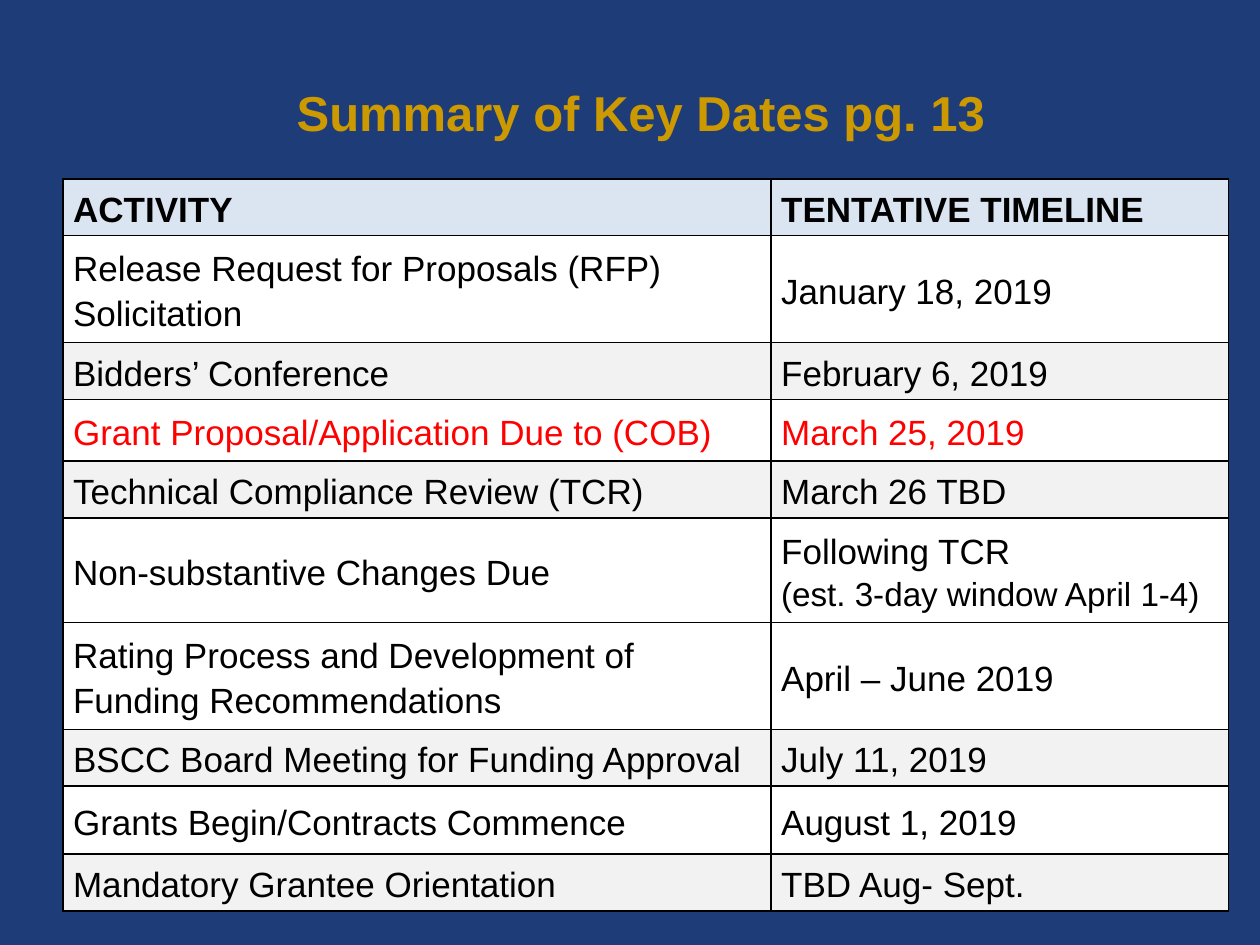
"""Build the key dates slide: a title above a two-column timeline table."""
import pptx
import pptx.dml.color
import pptx.enum.text
import pptx.oxml
import pptx.oxml.ns
import pptx.util

THEME = {
    "font": "Arial", "title_size": 28, "body_size": 20, "note_size": 19,
    "background": "1E3C78", "title": "CC9900", "text": "000000", "alert": "FF0000",
    "header": "DBE5F1", "plain": "FFFFFF", "band": "F2F2F2", "border": "000000",
}
ALIGN = pptx.enum.text.PP_ALIGN
ANCHOR = pptx.enum.text.MSO_ANCHOR

MILESTONES = [
    ("ACTIVITY", "TENTATIVE TIMELINE", 1.8, "header"),
    ("Release Request for Proposals (RFP) Solicitation", "January 18, 2019", 3.4, "plain"),
    ("Bidders’ Conference", "February 6, 2019", 1.8, "band"),
    ("Grant Proposal/Application Due to (COB)", "March 25, 2019", 1.96, "plain"),
    ("Technical Compliance Review (TCR)", "March 26 TBD", 1.8, "band"),
    ("Non-substantive Changes Due",
     "Following TCR\n(est. 3-day window April 1-4)", 3.32, "plain"),
    ("Rating Process and Development of Funding Recommendations",
     "April – June 2019", 3.4, "plain"),
    ("BSCC Board Meeting for Funding Approval", "July 11, 2019", 1.8, "band"),
    ("Grants Begin/Contracts Commence", "August 1, 2019", 2.16, "plain"),
    ("Mandatory Grantee Orientation", "TBD Aug- Sept.", 1.8, "band"),
]
COLUMN_SPANS = (22.48, 14.52)
DEADLINE_ROW = 3
FIRST_JUSTIFIED_DATE = 5


def style(paragraph, size, color, bold, align):
    paragraph.alignment = align
    for run in paragraph.runs:
        run.font.name = THEME["font"]
        run.font.size = pptx.util.Pt(THEME[size])
        run.font.bold = bold
        run.font.color.rgb = pptx.dml.color.RGBColor.from_string(THEME[color])


def add_borders(cell):
    properties = cell._tc.get_or_add_tcPr()
    for side in ("lnL", "lnR", "lnT", "lnB"):
        properties.append(pptx.oxml.parse_xml(
            f'<a:{side} {pptx.oxml.ns.nsdecls("a")} w="{pptx.util.Pt(1)}"><a:solidFill>'
            f'<a:srgbClr val="{THEME["border"]}"/></a:solidFill></a:{side}>'))


deck = pptx.Presentation()
deck.slide_width = pptx.util.Inches(10)
deck.slide_height = pptx.util.Inches(7.5)
column = deck.slide_width / 40
row = deck.slide_height / 30

slide = deck.slides.add_slide(deck.slide_layouts[5])
slide.background.fill.solid()
slide.background.fill.fore_color.rgb = pptx.dml.color.RGBColor.from_string(THEME["background"])

heading = slide.shapes.title
heading.left, heading.top = int(3.68 * column), int(2 * row)
heading.width, heading.height = int(33.32 * column), int(2.68 * row)
heading.text_frame.text = "Summary of Key Dates pg. 13"
heading.text_frame.auto_size = pptx.enum.text.MSO_AUTO_SIZE.NONE
heading.text_frame.vertical_anchor = ANCHOR.BOTTOM
style(heading.text_frame.paragraphs[0], "title_size", "title", True, ALIGN.CENTER)

total_rows = sum(milestone[2] for milestone in MILESTONES)
schedule = slide.shapes.add_table(
    len(MILESTONES), len(COLUMN_SPANS), int(2 * column), int(5.68 * row),
    int(sum(COLUMN_SPANS) * column), int(total_rows * row)).table
for table_column, span in zip(schedule.columns, COLUMN_SPANS):
    table_column.width = int(span * column)

for r, (activity, timeline, span, fill) in enumerate(MILESTONES):
    schedule.rows[r].height = int(span * row)
    for c, wording in enumerate((activity, timeline)):
        cell = schedule.cell(r, c)
        cell.text_frame.text = wording
        cell.vertical_anchor = ANCHOR.MIDDLE
        cell.margin_left = cell.margin_right = pptx.util.Inches(0.08)
        cell.margin_top = cell.margin_bottom = pptx.util.Inches(0.03)
        add_borders(cell)
        cell.fill.solid()
        cell.fill.fore_color.rgb = pptx.dml.color.RGBColor.from_string(THEME[fill])
        justified = r == 0 or (c == 1 and r >= FIRST_JUSTIFIED_DATE)
        for line, paragraph in enumerate(cell.text_frame.paragraphs):
            paragraph.line_spacing = 1.15
            style(paragraph, "note_size" if line else "body_size",
                  "alert" if r == DEADLINE_ROW else "text", r == 0,
                  ALIGN.JUSTIFY if justified else ALIGN.LEFT)

deck.save("out.pptx")
